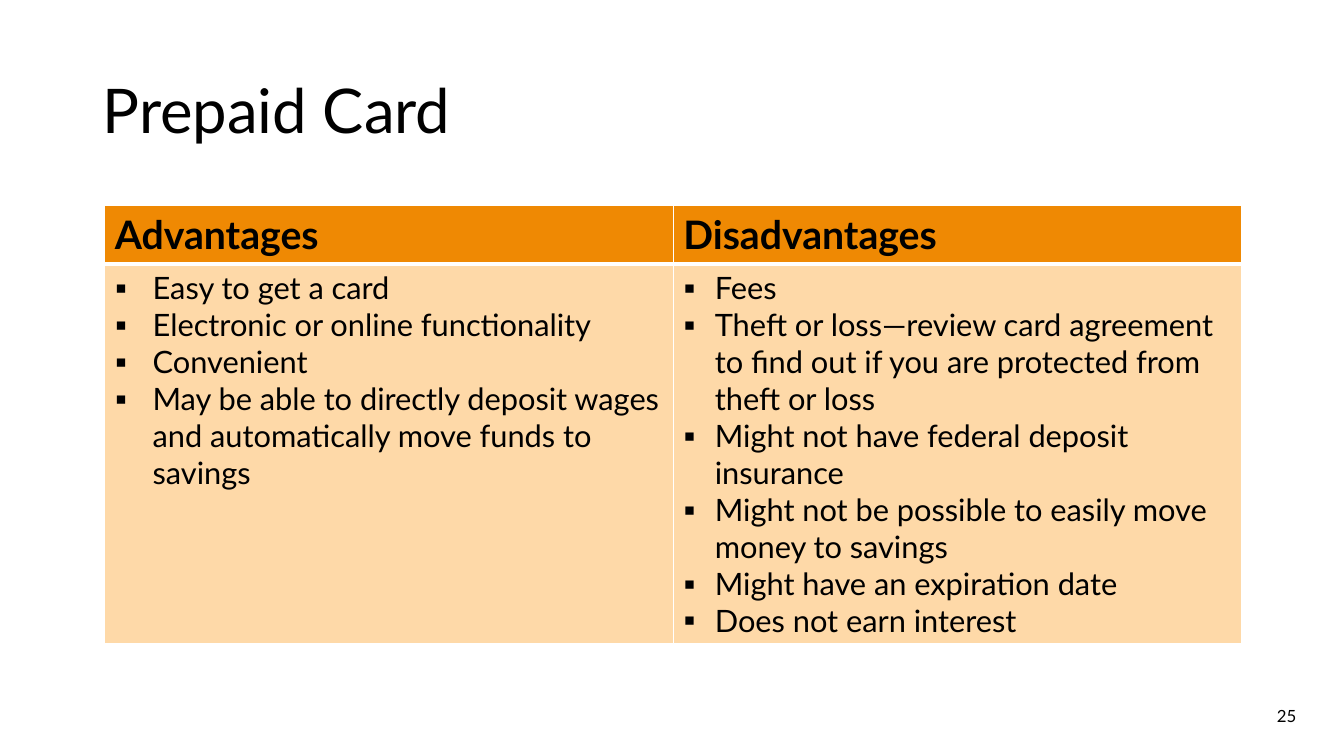
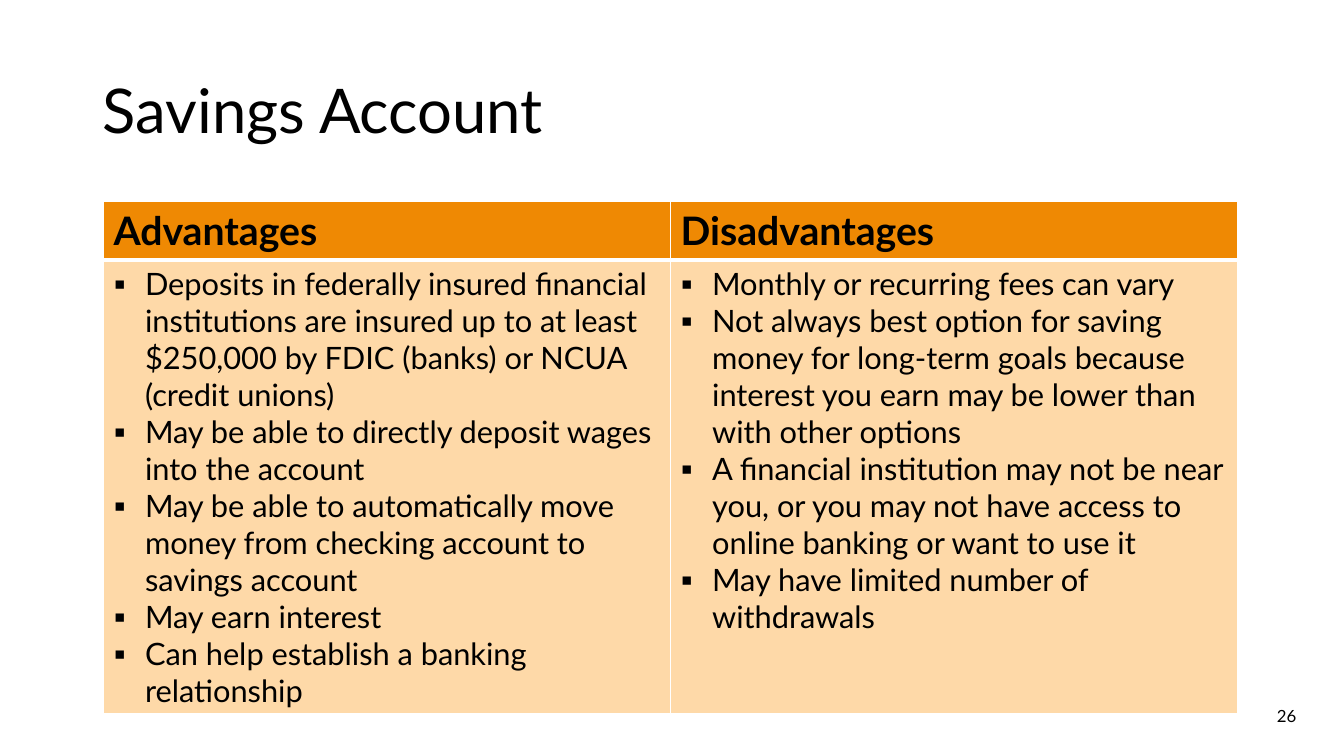
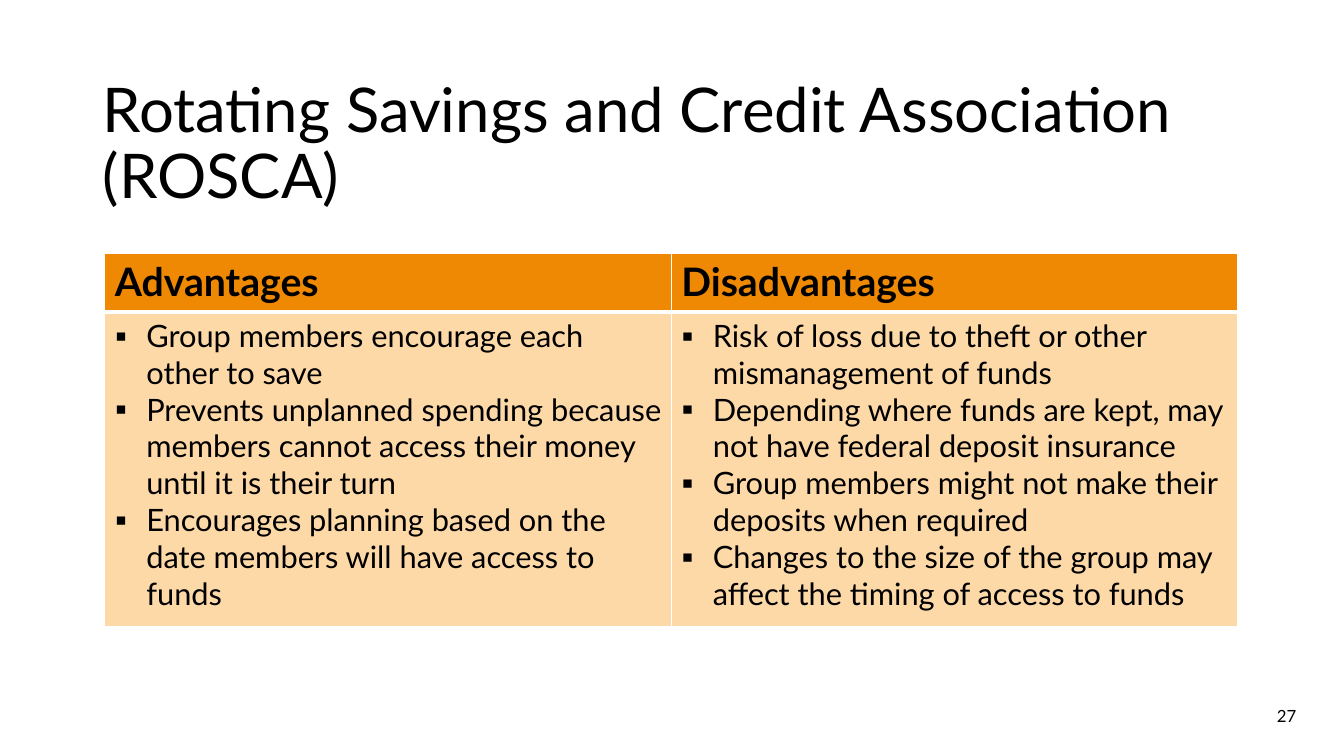
"""Build three slides comparing advantages and disadvantages of ways to save."""
from lxml.etree import SubElement
from pptx import Presentation
from pptx.dml.color import RGBColor
from pptx.enum.text import MSO_ANCHOR, PP_ALIGN
from pptx.oxml import parse_xml
from pptx.oxml.ns import nsdecls, qn
from pptx.util import Emu, Inches, Pt

FONT = "Lato"
BLACK = RGBColor(0x00, 0x00, 0x00)
WHITE = RGBColor(0xFF, 0xFF, 0xFF)
ORANGE = RGBColor(0xEF, 0x89, 0x03)
PEACH = RGBColor(0xFE, 0xD9, 0xA8)

presentation = Presentation()
presentation.slide_width = Inches(13.33)
presentation.slide_height = Inches(7.5)
COLUMN = presentation.slide_width / 100
ROW = presentation.slide_height / 100

HEADINGS = ("Advantages", "Disadvantages")
HEADER_ROWS = 7.73
WIDE_INDENT, INDENT = 2.81, 2.34
FIRST_NUMBER = 25

TOPICS = [
    {
        "title": "Prepaid Card", "title_top": 5.33,
        "left": 7.8, "top": 27.2, "width": 84.6, "body_rows": 50.13,
        "indents": (WIDE_INDENT, INDENT),
        "points": (
            [
                "Easy to get a card",
                "Electronic or online functionality",
                "Convenient",
                "May be able to directly deposit wages and automatically move funds to savings",
            ],
            [
                "Fees",
                "Theft or loss—review card agreement to find out if you are protected from theft or loss",
                "Might not have federal deposit insurance",
                "Might not be possible to easily move money to savings",
                "Might have an expiration date",
                "Does not earn interest",
            ],
        ),
    },
    {
        "title": "Savings Account", "title_top": 5.33,
        "left": 7.7, "top": 26.7, "width": 84.4, "body_rows": 59.87,
        "indents": (INDENT, INDENT),
        "points": (
            [
                "Deposits in federally insured financial institutions are insured up to at least "
                "$250,000 by FDIC (banks) or NCUA (credit unions)",
                "May be able to directly deposit wages into the account",
                "May be able to automatically move money from checking account to savings account",
                "May earn interest",
                "Can help establish a banking relationship",
            ],
            [
                "Monthly or recurring fees can vary",
                "Not always best option for saving money for long-term goals because interest "
                "you earn may be lower than with other options",
                "A financial institution may not be near you, or you may not have access to "
                "online banking or want to use it",
                "May have limited number of withdrawals",
            ],
        ),
    },
    {
        "title": "Rotating Savings and Credit Association (ROSCA)", "title_top": 9.6,
        "left": 7.8, "top": 33.5, "width": 84.3, "body_rows": 41.6,
        "indents": (INDENT, INDENT),
        "points": (
            [
                "Group members encourage each other to save",
                "Prevents unplanned spending because members cannot access their money "
                "until it is their turn",
                "Encourages planning based on the date members will have access to funds",
            ],
            [
                "Risk of loss due to theft or other mismanagement of funds",
                "Depending where funds are kept, may not have federal deposit insurance",
                "Group members might not make their deposits when required",
                "Changes to the size of the group may affect the timing of access to funds",
            ],
        ),
    },
]


def write(frame, *lines, size, bold=False, align=PP_ALIGN.LEFT, spacing=1.0, indent=None):
    """Fill a text frame with one formatted paragraph per line."""
    frame.word_wrap = True
    for position, line in enumerate(lines):
        paragraph = frame.add_paragraph() if position else frame.paragraphs[0]
        paragraph.alignment = align
        paragraph.line_spacing = spacing
        if indent:
            properties = paragraph._p.get_or_add_pPr()
            properties.set("marL", str(round(indent * COLUMN)))
            properties.set("indent", str(-round(indent * COLUMN)))
            SubElement(properties, qn("a:buFont"), typeface=FONT)
            SubElement(properties, qn("a:buChar"), char="▪")
        run = paragraph.add_run()
        run.text = line
        run.font.name = FONT
        run.font.size = Pt(size)
        run.font.bold = bold
        run.font.color.rgb = BLACK


def paint(cell, color, **borders):
    """Fill a cell and draw its white borders, given in points by side."""
    cell.fill.solid()
    cell.fill.fore_color.rgb = color
    for position, side in enumerate("LRTB"):
        width = Pt(borders.get(side, 1))
        line = parse_xml(
            f'<a:ln{side} {nsdecls("a")} w="{width}"><a:solidFill>'
            f'<a:srgbClr val="{WHITE}"/></a:solidFill></a:ln{side}>'
        )
        cell._tc.get_or_add_tcPr().insert(position, line)


for number, topic in enumerate(TOPICS, FIRST_NUMBER):
    slide = presentation.slides.add_slide(presentation.slide_layouts[6])
    slide.background.fill.solid()
    slide.background.fill.fore_color.rgb = WHITE

    for text, left, top, width, height, style in (
        (topic["title"], 6.9, topic["title_top"], 86.25, 19.33, {"size": 44, "spacing": 0.9}),
        (str(number), 70.65, 91.33, 26.55, 6.67, {"size": 12, "align": PP_ALIGN.RIGHT}),
    ):
        box = slide.shapes.add_textbox(
            Emu(round(left * COLUMN)), Emu(round(top * ROW)),
            Emu(round(width * COLUMN)), Emu(round(height * ROW)),
        )
        box.text_frame.vertical_anchor = MSO_ANCHOR.MIDDLE
        write(box.text_frame, text, **style)

    table = slide.shapes.add_table(
        2, 2,
        Emu(round(topic["left"] * COLUMN)), Emu(round(topic["top"] * ROW)),
        Emu(round(topic["width"] * COLUMN)),
        Emu(round((HEADER_ROWS + topic["body_rows"]) * ROW)),
    ).table
    table.rows[0].height = Emu(round(HEADER_ROWS * ROW))
    table.rows[1].height = Emu(round(topic["body_rows"] * ROW))

    for column, heading in enumerate(HEADINGS):
        header, body = table.cell(0, column), table.cell(1, column)
        paint(header, ORANGE, B=3)
        paint(body, PEACH, T=3)
        write(header.text_frame, heading, size=28, bold=True)
        write(body.text_frame, *topic["points"][column], size=22, indent=topic["indents"][column])

presentation.save("out.pptx")
